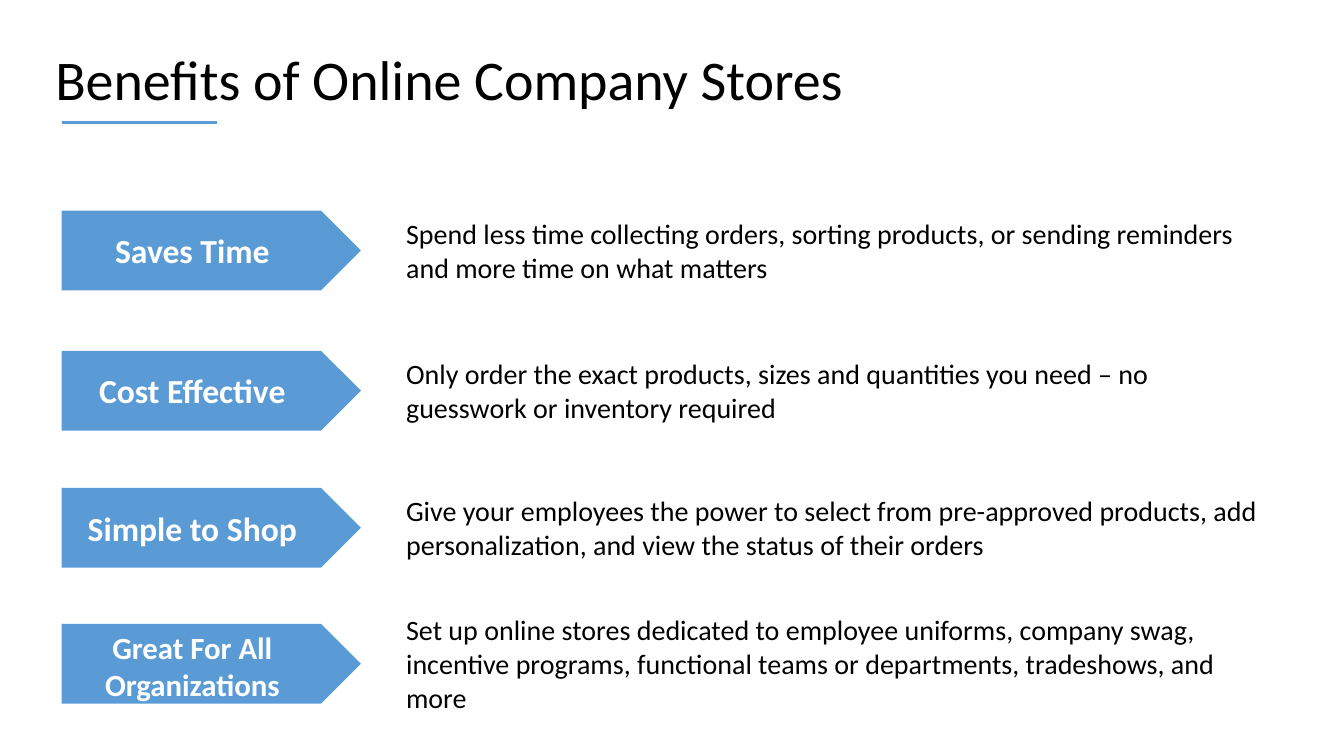
from pptx import Presentation
from pptx.dml.color import RGBColor
from pptx.enum.shapes import MSO_CONNECTOR as LINE, MSO_SHAPE as SHAPE
from pptx.enum.text import MSO_ANCHOR as ANCHOR, MSO_AUTO_SIZE as AUTO, PP_ALIGN as ALIGN
from pptx.oxml.ns import qn
from pptx.util import Pt

COLORS = {"accent": "5B9BD5", "text": "000000", "label": "FFFFFF"}
FORMATS = {
    "title": {"size": Pt(40)},
    "label": {"size": Pt(24), "bold": True},
    "long_label": {"size": Pt(22), "bold": True},
    "text": {"size": Pt(20)},
}
ARROW_W, ARROW_H, LABEL_W = 213.84, 56.88, 186.8
TEXT_X, TEXT_W = 239, 626.4

# Row top, label, label format, label height, description, description height
BENEFITS = [
    (150.5, "Saves Time", "label", 36,
     "Spend less time collecting orders, sorting products, or sending reminders "
     "and more time on what matters", 55.4),
    (250.6, "Cost Effective", "label", 36,
     "Only order the exact products, sizes and quantities you need – no "
     "guesswork or inventory required", 55.4),
    (348.5, "Simple to Shop", "label", 36,
     "Give your employees the power to select from pre-approved products, add "
     "personalization, and view the status of their orders", 55.4),
    (445.7, "Great For All Organizations", "long_label", 60.5,
     "Set up online stores dedicated to employee uniforms, company swag, "
     "incentive programs, functional teams or departments, tradeshows, and more", 79.9),
]


def color(name):
    return RGBColor.from_string(COLORS[name])


def add_text(shapes, box, text, fmt, color_name="text", align=ALIGN.LEFT):
    tb = shapes.add_textbox(*map(Pt, box))
    tf = tb.text_frame
    tf.word_wrap = True
    tf.auto_size = AUTO.SHAPE_TO_FIT_TEXT
    p = tf.paragraphs[0]
    p.alignment = align
    r = p.add_run()
    r.text = text
    r.font.name = "Calibri"
    r.font.color.rgb = color(color_name)
    for name, value in FORMATS[fmt].items():
        setattr(r.font, name, value)
    return tf


def add_header(s, x, y, w, h):
    # Title
    tf = add_text(s.shapes, (x, y, w, h), "Benefits of Online Company Stores", "title")
    tf.auto_size = AUTO.NONE
    tf.vertical_anchor = ANCHOR.MIDDLE
    for side in ("left", "top", "right", "bottom"):
        setattr(tf, f"margin_{side}", Pt(7.2))

    # Accent rule
    rule_x, rule_y = x + 12.2, y + 64.8
    rule = s.shapes.add_connector(
        LINE.STRAIGHT, Pt(rule_x), Pt(rule_y), Pt(rule_x + 110.2), Pt(rule_y))
    rule.line.color.rgb = color("accent")
    rule.line.width = Pt(2.25)
    props = rule._element.spPr
    props.append(props.makeelement(qn("a:effectLst"), {}))


def add_benefit(s, x, y, label, label_fmt, label_h, text, text_h):
    shapes = s.shapes.add_group_shape().shapes

    # Arrow
    arrow = shapes.add_shape(SHAPE.PENTAGON, *map(Pt, (x, y, ARROW_W, ARROW_H)))
    arrow.shadow.inherit = False
    arrow.fill.solid()
    arrow.fill.fore_color.rgb = color("accent")
    arrow.line.fill.background()

    # Label, kept from rising above the arrow
    label_y = y + max(0, (ARROW_H - label_h) / 2)
    add_text(shapes, (x, label_y, LABEL_W, label_h), label, label_fmt, "label", ALIGN.CENTER)

    # Description, centred on the arrow
    text_y = y + (ARROW_H - text_h) / 2
    add_text(shapes, (x + TEXT_X, text_y, TEXT_W, text_h), text, "text")


def main():
    prs = Presentation()
    prs.slide_width, prs.slide_height = Pt(960), Pt(540)
    s = prs.slides.add_slide(prs.slide_layouts[6])
    add_header(s, 32.4, 23, 894.2, 65.5)
    for top, *content in BENEFITS:
        add_benefit(s, 44, top, *content)
    prs.save("out.pptx")


if __name__ == "__main__":
    main()
